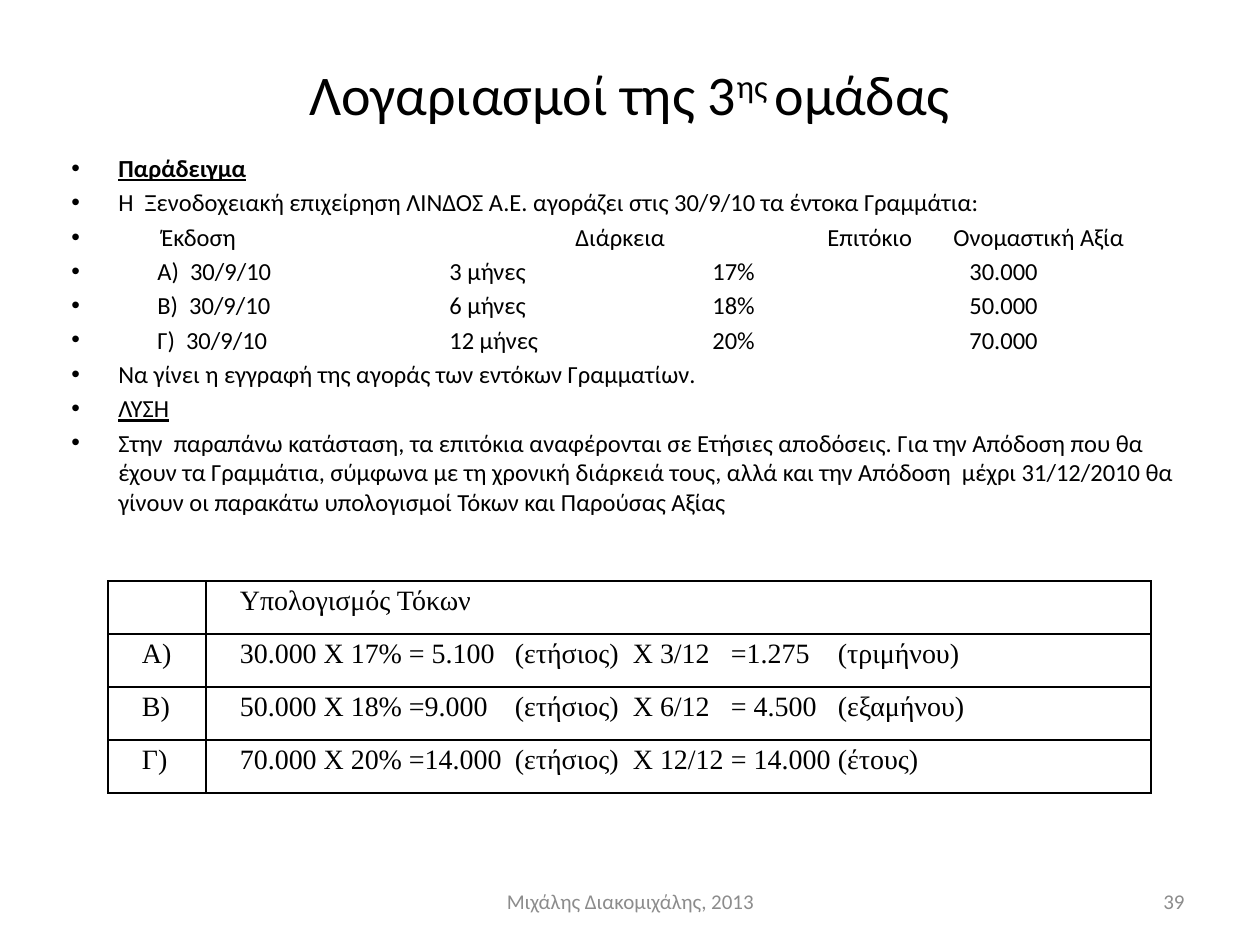
from lxml.etree import SubElement
from pptx import Presentation
from pptx.dml.color import RGBColor
from pptx.enum.text import MSO_ANCHOR, PP_ALIGN
from pptx.oxml.ns import qn
from pptx.util import Emu, Pt

BLACK = RGBColor(0x00, 0x00, 0x00)
GREY = RGBColor(0x8C, 0x8C, 0x8C)


def px(count):
    return Emu(round(count * 914400 / 126))


def add_run(paragraph, text, size, color=BLACK, font="Calibri"):
    run = paragraph.add_run()
    run.text = text
    run.font.size = Pt(size)
    run.font.name = font
    run.font.color.rgb = color
    return run


deck = Presentation()
deck.slide_width, deck.slide_height = px(1260), px(945)
slide = deck.slides.add_slide(deck.slide_layouts[6])

# Title with a raised ending
title = slide.shapes.add_textbox(px(69), px(39), px(1134), px(108)).text_frame
title.word_wrap = True
title.vertical_anchor = MSO_ANCHOR.MIDDLE
heading = title.paragraphs[0]
heading.alignment = PP_ALIGN.CENTER
for text, baseline in (("Λογαριασμοί της 3", 0), ("ης ", 30000), ("ομάδας ", 0)):
    run = add_run(heading, text, 32)
    run.font._element.set("baseline", str(baseline))

# Example: text, text indent, tab stops, bold, underline
HEADER_TABS = (504, 756, 882)
BOND_TABS = (378, 641, 898)
example_lines = [
    ("Παράδειγμα", 47, (), True, True),
    ("Η  Ξενοδοχειακή επιχείρηση ΛΙΝΔΟΣ Α.Ε. αγοράζει στις 30/9/10 τα έντοκα Γραμμάτια:",
     47, (), False, False),
    ("Έκδοση\tΔιάρκεια\tΕπιτόκιο\tΟνομαστική Αξία", 90, HEADER_TABS, False, False),
    ("Α)  30/9/10\t3 μήνες\t17%\t30.000", 86, BOND_TABS, False, False),
    ("Β)  30/9/10\t6 μήνες\t18%\t50.000", 86, BOND_TABS, False, False),
    ("Γ)  30/9/10\t12 μήνες\t20%\t70.000", 86, BOND_TABS, False, False),
    ("Να γίνει η εγγραφή της αγοράς των εντόκων Γραμματίων.", 47, (), False, False),
    ("ΛΥΣΗ", 47, (), False, True),
    ("Στην  παραπάνω κατάσταση, τα επιτόκια αναφέρονται σε Ετήσιες αποδόσεις. "
     "Για την Απόδοση που θα έχουν τα Γραμμάτια, σύμφωνα με τη χρονική διάρκειά τους, "
     "αλλά και την Απόδοση  μέχρι 31/12/2010 θα γίνουν οι παρακάτω υπολογισμοί "
     "Τόκων και Παρούσας Αξίας", 47, (), False, False),
]
example = slide.shapes.add_textbox(px(59), px(147), px(1134), px(444)).text_frame
example.word_wrap = True
for index, (text, indent, tabs, bold, underline) in enumerate(example_lines):
    line = example.paragraphs[0] if index == 0 else example.add_paragraph()
    line.space_before = Pt(2.8)
    properties = line._p.get_or_add_pPr()
    properties.set("marL", str(px(indent)))
    properties.set("indent", str(-px(indent)))
    SubElement(properties, qn("a:buFont"), typeface="Arial")
    SubElement(properties, qn("a:buChar"), char="•")
    if tabs:
        tab_list = SubElement(properties, qn("a:tabLst"))
        for tab in tabs:
            SubElement(tab_list, qn("a:tab"), pos=str(px(tab)), algn="l")
    run = add_run(line, text, 14)
    run.font.bold = bold
    run.font.underline = underline

# Interest table
interest_rows = [
    ("", "Υπολογισμός Τόκων"),
    ("Α)", "30.000 Χ 17% = 5.100\t(ετήσιος)\tΧ 3/12\t=1.275\t(τριμήνου)"),
    ("Β)", "50.000 Χ 18% =9.000\t(ετήσιος)\tΧ 6/12\t= 4.500\t(εξαμήνου)"),
    ("Γ)", "70.000 Χ 20% =14.000\t(ετήσιος)\tΧ 12/12\t= 14.000\t(έτους)"),
]
interest = slide.shapes.add_table(4, 2, px(108), px(581), px(1043), px(212)).table
interest.first_row = False
interest.horz_banding = False
interest.columns[0].width, interest.columns[1].width = px(98), px(945)
for row, texts in enumerate(interest_rows):
    interest.rows[row].height = px(53)
    for column, text in enumerate(texts):
        cell = interest.cell(row, column)
        cell.margin_left, cell.margin_right = px(34), px(9)
        cell.margin_top = cell.margin_bottom = 0
        cell_properties = cell._tc.get_or_add_tcPr()
        for side in ("a:lnL", "a:lnR", "a:lnT", "a:lnB"):
            border = SubElement(cell_properties, qn(side), w=str(Pt(1)))
            border_fill = SubElement(border, qn("a:solidFill"))
            SubElement(border_fill, qn("a:srgbClr"), val=str(BLACK))
        cell.fill.background()
        entry = cell.text_frame.paragraphs[0]
        entry.alignment = PP_ALIGN.JUSTIFY
        entry.line_spacing = 1.15
        if "\t" in text:
            tab_list = SubElement(entry._p.get_or_add_pPr(), qn("a:tabLst"))
            for tab in (275, 393, 491, 598):
                SubElement(tab_list, qn("a:tab"), pos=str(px(tab)), algn="l")
        if text:
            add_run(entry, text, 16, font="Times New Roman")

# Footer and slide number
for text, left, width, alignment in (
    ("Μιχάλης Διακομιχάλης, 2013", 431, 399, PP_ALIGN.CENTER),
    ("39", 903, 294, PP_ALIGN.RIGHT),
):
    footer = slide.shapes.add_textbox(px(left), px(876), px(width), px(50)).text_frame
    footer.word_wrap = True
    footer.vertical_anchor = MSO_ANCHOR.MIDDLE
    footer.paragraphs[0].alignment = alignment
    add_run(footer.paragraphs[0], text, 12, GREY)

deck.save("out.pptx")
